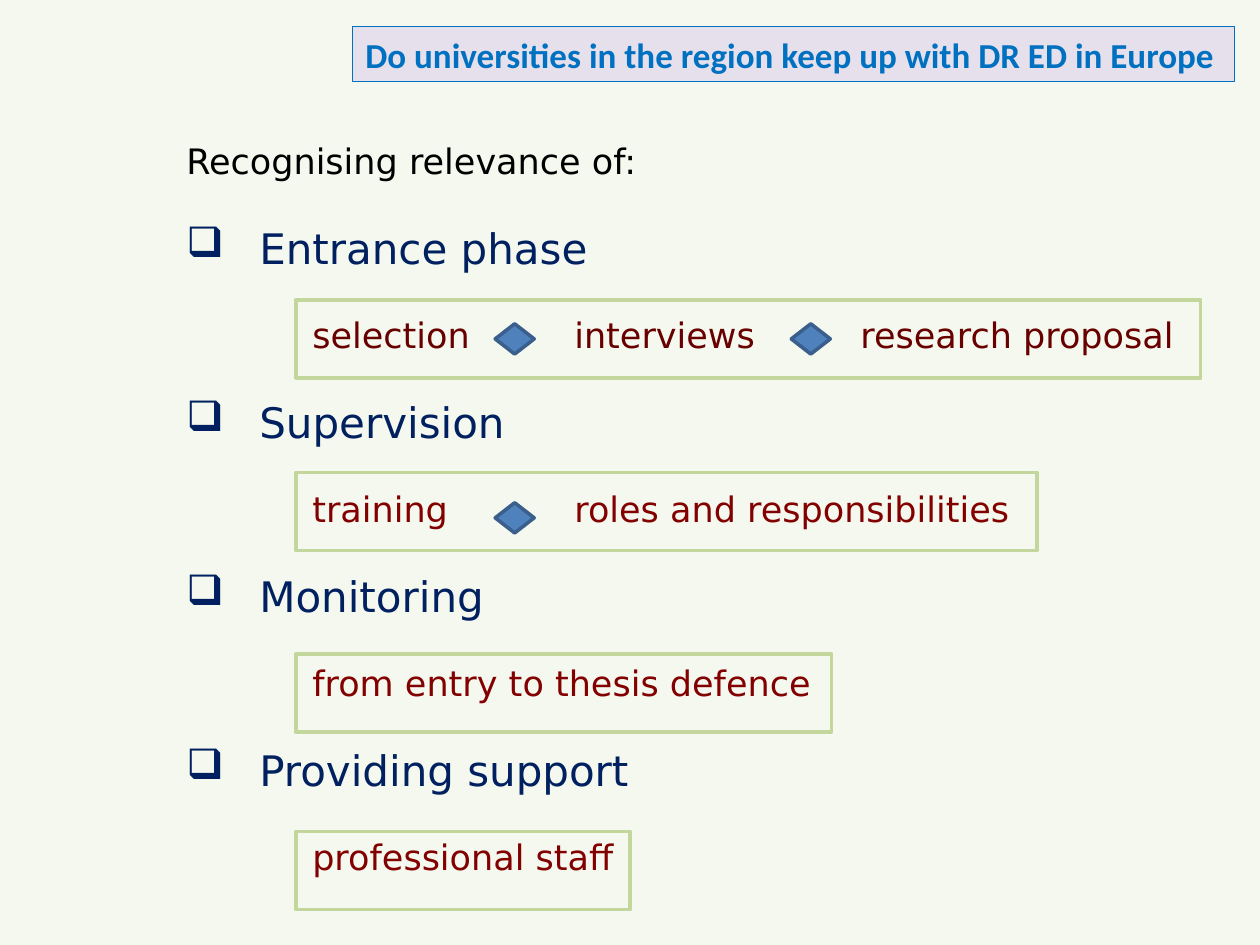
from dataclasses import dataclass

from lxml import etree
from pptx import Presentation
from pptx.dml.color import RGBColor
from pptx.enum.shapes import MSO_SHAPE
from pptx.enum.text import MSO_ANCHOR, PP_ALIGN
from pptx.oxml.ns import qn
from pptx.util import Inches, Pt

RECTANGLE, DIAMOND = MSO_SHAPE.RECTANGLE, MSO_SHAPE.DIAMOND
LEFT, TOP, MIDDLE = PP_ALIGN.LEFT, MSO_ANCHOR.TOP, MSO_ANCHOR.MIDDLE


@dataclass(frozen=True)
class Theme:
    background: str = "F5F8EE"
    title_fill: str = "E6E0EC"
    title: str = "0070C0"
    intro: str = "000000"
    heading: str = "002060"
    entrance_detail: str = "680000"
    detail: str = "820000"
    frame: str = "C3D69B"
    diamond_fill: str = "4F81BD"
    diamond_line: str = "3A5F8C"
    title_font: str = "Calibri"
    body_font: str = "DejaVu Sans"
    body_size: int = 20
    heading_size: int = 24
    gap: float = 23.3


THEME = Theme()
TAB_STOPS = (1, 3.08, 5.35)
HEADING_INDENT = 0.58
FRAME_LEFT, FRAME_HEIGHT = 2.35, 0.62

PHASES = [
    ("Entrance phase", ("selection", "interviews", "research proposal"), THEME.entrance_detail),
    ("Supervision", ("training", "roles and responsibilities"), THEME.detail),
    ("Monitoring", ("from entry to thesis defence",), THEME.detail),
    ("Providing support", ("professional staff",), THEME.detail),
]
FRAMES = [(2.38, 7.18), (3.75, 5.88), (5.19, 4.25), (6.6, 2.65)]
DIAMONDS = [(3.93, 2.57), (6.28, 2.57), (3.93, 3.99)]


def apply_format(target, values):
    for name, value in values.items():
        setattr(target, name, value)


def paint(shape, fill, line, width):
    if fill:
        shape.fill.solid()
        shape.fill.fore_color.rgb = RGBColor.from_string(fill)
    else:
        shape.fill.background()
    shape.line.color.rgb = RGBColor.from_string(line)
    shape.line.width = Pt(width)


def add_run(paragraph, text, font, size, color, bold=False):
    run = paragraph.add_run()
    run.text = text
    apply_format(run.font, {"name": font, "size": Pt(size), "bold": bold})
    run.font.color.rgb = RGBColor.from_string(color)


def set_title(slide, text):
    title = slide.shapes.title
    apply_format(title, {"left": Inches(2.8), "top": Inches(0.21),
                         "width": Inches(7), "height": Inches(0.44)})
    paint(title, THEME.title_fill, THEME.title, 0.75)
    apply_format(title.text_frame, {"word_wrap": False, "vertical_anchor": MIDDLE})
    paragraph = title.text_frame.paragraphs[0]
    paragraph.alignment = LEFT
    add_run(paragraph, text, THEME.title_font, THEME.body_size, THEME.title, True)


def add_heading(text_frame, text):
    paragraph = text_frame.add_paragraph()
    paragraph.space_before = Pt(THEME.gap)
    add_run(paragraph, text, THEME.body_font, THEME.heading_size, THEME.heading)
    properties = paragraph._p.get_or_add_pPr()
    properties.set("marL", str(Inches(HEADING_INDENT)))
    properties.set("indent", str(-Inches(HEADING_INDENT)))
    etree.SubElement(properties, qn("a:buChar"), char="❑")


def add_details(text_frame, details, color):
    paragraph = text_frame.add_paragraph()
    paragraph.space_before = Pt(THEME.gap)
    add_run(paragraph, "".join("\t" + detail for detail in details),
            THEME.body_font, THEME.body_size, color)
    tabs = etree.SubElement(paragraph._p.get_or_add_pPr(), qn("a:tabLst"))
    for stop in TAB_STOPS:
        etree.SubElement(tabs, qn("a:tab"), pos=str(Inches(stop)), algn="l")


def add_outline(slide, intro):
    box = slide.shapes.add_textbox(Inches(1.38), Inches(1.06), Inches(8.15), Inches(6.09))
    text_frame = box.text_frame
    apply_format(text_frame, {"word_wrap": True, "vertical_anchor": TOP})
    add_run(text_frame.paragraphs[0], intro, THEME.body_font, THEME.body_size, THEME.intro)
    for heading, details, color in PHASES:
        add_heading(text_frame, heading)
        add_details(text_frame, details, color)


def add_figure(slide, kind, left, top, width, height, fill, line):
    shape = slide.shapes.add_shape(kind, Inches(left), Inches(top), Inches(width), Inches(height))
    shape.shadow.inherit = False
    paint(shape, fill, line, 2)


def main():
    presentation = Presentation()
    apply_format(presentation, {"slide_width": Inches(10), "slide_height": Inches(7.5)})
    slide = presentation.slides.add_slide(presentation.slide_layouts[5])
    slide.background.fill.solid()
    slide.background.fill.fore_color.rgb = RGBColor.from_string(THEME.background)

    set_title(slide, "Do universities in the region keep up with DR ED in Europe")
    add_outline(slide, "Recognising relevance of:")
    for left, top in DIAMONDS:
        add_figure(slide, DIAMOND, left, top, 0.31, 0.24, THEME.diamond_fill, THEME.diamond_line)
    for top, width in FRAMES:
        add_figure(slide, RECTANGLE, FRAME_LEFT, top, width, FRAME_HEIGHT, None, THEME.frame)
    presentation.save("out.pptx")


if __name__ == "__main__":
    main()
